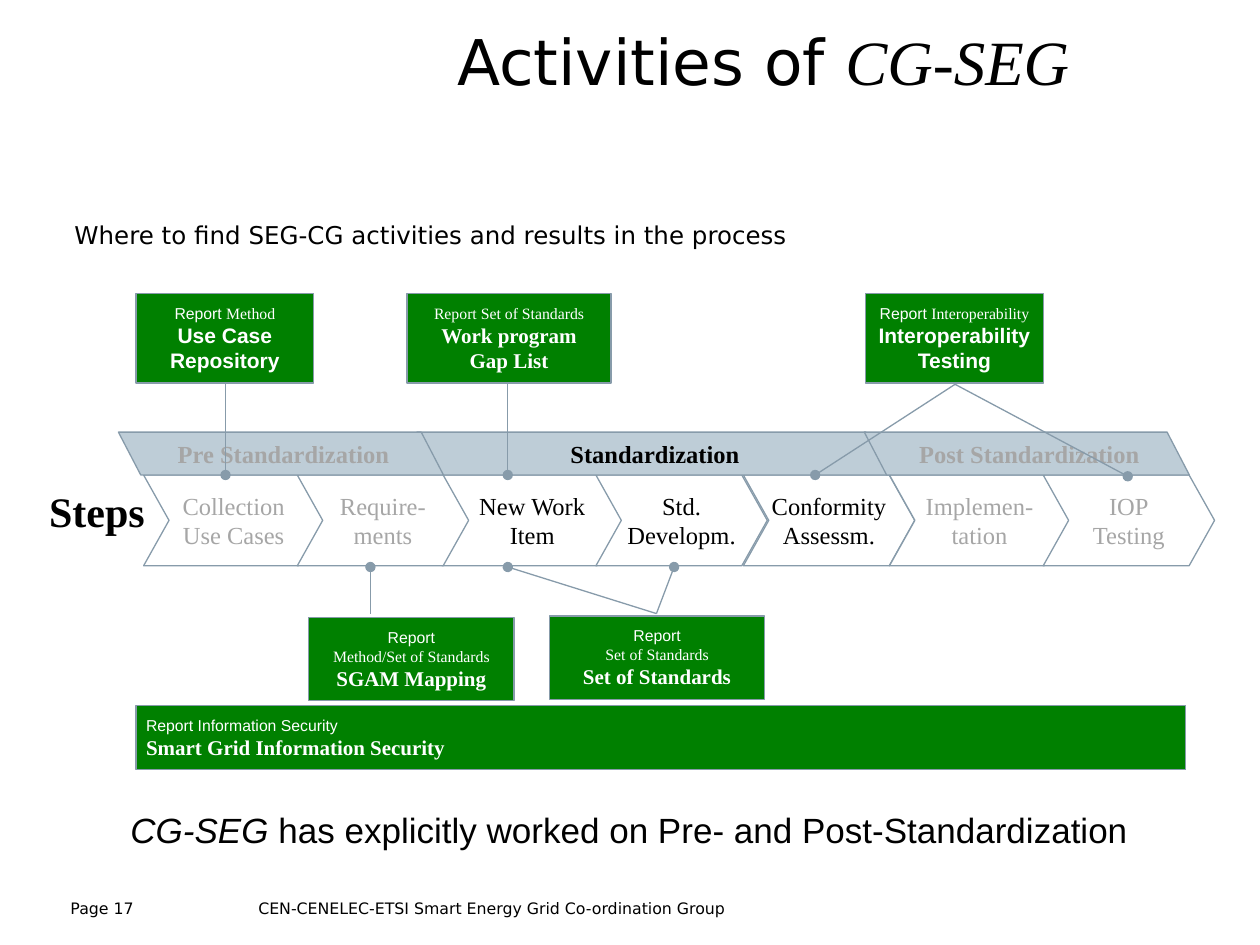
"""Build the slide that maps group activities onto the standardization process."""
from dataclasses import dataclass

from lxml import etree
from pptx import Presentation, util as u
from pptx.dml.color import RGBColor
from pptx.enum import shapes, text
from pptx.oxml import ns

PX = u.Inches(1) // 100
SERIF, SANS, WIDE = "Times New Roman", "Arial", "DejaVu Sans"
LEFT, CENTER = text.PP_ALIGN.LEFT, text.PP_ALIGN.CENTER
TOP, MIDDLE, BOTTOM = (
    text.MSO_ANCHOR.TOP, text.MSO_ANCHOR.MIDDLE, text.MSO_ANCHOR.BOTTOM)


@dataclass(frozen=True)
class Theme:
    ink: str = "000000"
    muted: str = "A6A6A6"
    white: str = "FFFFFF"
    line: str = "879BAA"
    band: str = "BECDD7"
    report: str = "008000"
    footer: int = 9
    small: int = 9
    strong: int = 12
    body: int = 14
    message: int = 20
    steps: int = 24
    title: int = 36
    stroke: float = 0.75


THEME = Theme()


@dataclass(frozen=True)
class Run:
    text: str
    size: int
    font: str = SERIF
    bold: bool = False
    italic: bool = False


@dataclass(frozen=True)
class Step:
    left: int
    width: int
    lines: tuple[str, str]


@dataclass(frozen=True)
class Stage:
    name: str
    left: int
    width: int
    color: str
    steps: tuple[Step, ...]


@dataclass(frozen=True)
class Report:
    box: tuple[int, int, int, int]
    lines: tuple[tuple[Run, ...], ...]
    align: text.PP_ALIGN = CENTER


def small(content: str, font: str = SERIF) -> Run:
    return Run(content, THEME.small, font)


def strong(content: str, font: str = SERIF) -> Run:
    return Run(content, THEME.strong, font, bold=True)


STAGES = (
    Stage("Standardization", 331, 374, THEME.ink, (
        Step(351, 143, ("New Work", "Item")),
        Step(473, 136, ("Std.", "Developm.")),
        Step(590, 136, ("Conformity", "Assessm.")))),
    Stage("Post Standardization", 686, 258, THEME.muted, (
        Step(706, 143, ("Implemen-", "tation")),
        Step(828, 136, ("IOP", "Testing")))),
    Stage("Pre Standardization", 94, 258, THEME.muted, (
        Step(114, 143, ("Collection", "Use Cases")),
        Step(236, 136, ("Require-", "ments")))),
)
REPORTS = (
    Report((108, 233, 141, 71), (
        (small("Report ", SANS), small("Method")),
        (strong("Use Case Repository", SANS),))),
    Report((245, 490, 163, 66), (
        (small("Report", SANS),), (small("Method/Set of Standards"),),
        (strong("SGAM Mapping"),))),
    Report((323, 233, 162, 71), (
        (small("Report Set of Standards"),),
        (strong("Work program"),), (strong("Gap List"),))),
    Report((687, 233, 141, 71), (
        (small("Report ", SANS), small("Interoperability")),
        (strong("Interoperability Testing", SANS),))),
    Report((108, 560, 833, 51), (
        (small("Report Information Security", SANS),),
        (strong("Smart Grid Information Security"),)), LEFT),
    Report((436, 489, 171, 66), (
        (small("Report", SANS),), (small("Set of Standards"),),
        (strong("Set of Standards"),))),
)
LINKS = (
    ((179, 305), (179, 377)), ((294, 487), (294, 450)),
    ((403, 305), (403, 377)), ((758, 305), (647, 377)),
    ((758, 305), (895, 378)), ((521, 487), (403, 450)),
    ((521, 487), (535, 450)),
)


def px(*lengths: int) -> list[u.Emu]:
    return [u.Emu(length * PX) for length in lengths]


def write(shape, lines, *, color=THEME.ink, align=LEFT, anchor=TOP,
          insets=(0, 0, 0, 0), wrap=True, before=0) -> None:
    frame = shape.text_frame
    frame.word_wrap, frame.vertical_anchor = wrap, anchor
    (frame.margin_left, frame.margin_top,
     frame.margin_right, frame.margin_bottom) = px(*insets)
    for index, runs in enumerate(lines):
        paragraph = frame.add_paragraph() if index else frame.paragraphs[0]
        paragraph.alignment = align
        paragraph.space_before = u.Pt(before)
        for item in runs:
            run = paragraph.add_run()
            run.text = item.text
            run.font.name, run.font.size = item.font, u.Pt(item.size)
            run.font.bold, run.font.italic = item.bold, item.italic
            run.font.color.rgb = RGBColor.from_string(color)


def add_label(slide, box, *runs: Run, **layout) -> None:
    write(slide.shapes.add_textbox(*px(*box)), (runs,), **layout)


def add_block(slide, kind, box, fill: str):
    shape = slide.shapes.add_shape(kind, *px(*box))
    shape.shadow.inherit = False
    shape.fill.solid()
    shape.fill.fore_color.rgb = RGBColor.from_string(fill)
    shape.line.color.rgb = RGBColor.from_string(THEME.line)
    shape.line.width = u.Pt(THEME.stroke)
    return shape


def add_stage(slide, stage: Stage) -> None:
    for step in stage.steps:
        chevron = add_block(slide, shapes.MSO_SHAPE.CHEVRON,
                            (step.left, 377, step.width, 72), THEME.white)
        chevron.adjustments[0] = 0.28
        write(chevron, [(Run(line, THEME.body),) for line in step.lines],
              color=stage.color, align=CENTER, anchor=MIDDLE,
              insets=(8, 8, 8, 8), wrap=False)
    band = add_block(slide, shapes.MSO_SHAPE.PARALLELOGRAM,
                     (stage.left, 343, stage.width, 34), THEME.band)
    band.adjustments[0] = 0.52
    band.element.spPr.xfrm.set("flipH", "1")
    write(band, ((Run(stage.name, THEME.body, bold=True),),),
          color=stage.color, align=CENTER, anchor=MIDDLE,
          insets=(4, 0, 0, 0), wrap=False)


def add_report(slide, report: Report) -> None:
    shape = add_block(slide, shapes.MSO_SHAPE.RECTANGLE, report.box, THEME.report)
    write(shape, report.lines, color=THEME.white, align=report.align,
          anchor=BOTTOM, insets=(8, 8, 8, 8))


def add_link(slide, start: tuple[int, int], end: tuple[int, int]) -> None:
    link = slide.shapes.add_connector(
        shapes.MSO_CONNECTOR.STRAIGHT, *px(*start, *end))
    link.line.color.rgb = RGBColor.from_string(THEME.line)
    link.line.width = u.Pt(THEME.stroke)
    properties = link.element.spPr
    outline = properties.find(ns.qn("a:ln"))
    etree.SubElement(outline, ns.qn("a:tailEnd")).set("type", "oval")
    etree.SubElement(properties, ns.qn("a:effectLst"))


def main() -> None:
    presentation = Presentation()
    presentation.slide_width, presentation.slide_height = px(1000, 750)
    slide = presentation.slides.add_slide(presentation.slide_layouts[6])
    add_label(slide, (56, 708, 120, 25), Run("Page 17", THEME.footer, WIDE),
              insets=(0, 5, 0, 5))
    add_label(slide, (205, 708, 795, 25),
              Run("CEN-CENELEC-ETSI Smart Energy Grid Co-ordination Group",
                  THEME.footer, WIDE), insets=(0, 5, 0, 5))
    add_label(slide, (353, 13, 589, 134), Run("Activities of ", THEME.title, WIDE),
              Run("CG-SEG", THEME.title, italic=True), insets=(10, 5, 10, 5))
    for stage in STAGES:
        add_stage(slide, stage)
    add_label(slide, (39, 392, 149, 26), Run("Steps", THEME.steps, bold=True),
              anchor=MIDDLE)
    for report in REPORTS:
        add_report(slide, report)
    for start, end in LINKS:
        add_link(slide, start, end)
    add_label(slide, (59, 175, 898, 24),
              Run("Where to find SEG-CG activities and results in the process",
                  THEME.body, WIDE), before=6)
    add_label(slide, (76, 641, 847, 34),
              Run("CG-SEG", THEME.message, SANS, italic=True),
              Run(" has explicitly worked on Pre- and Post-Standardization",
                  THEME.message, SANS), align=CENTER, anchor=BOTTOM)
    presentation.save("out.pptx")


if __name__ == "__main__":
    main()
